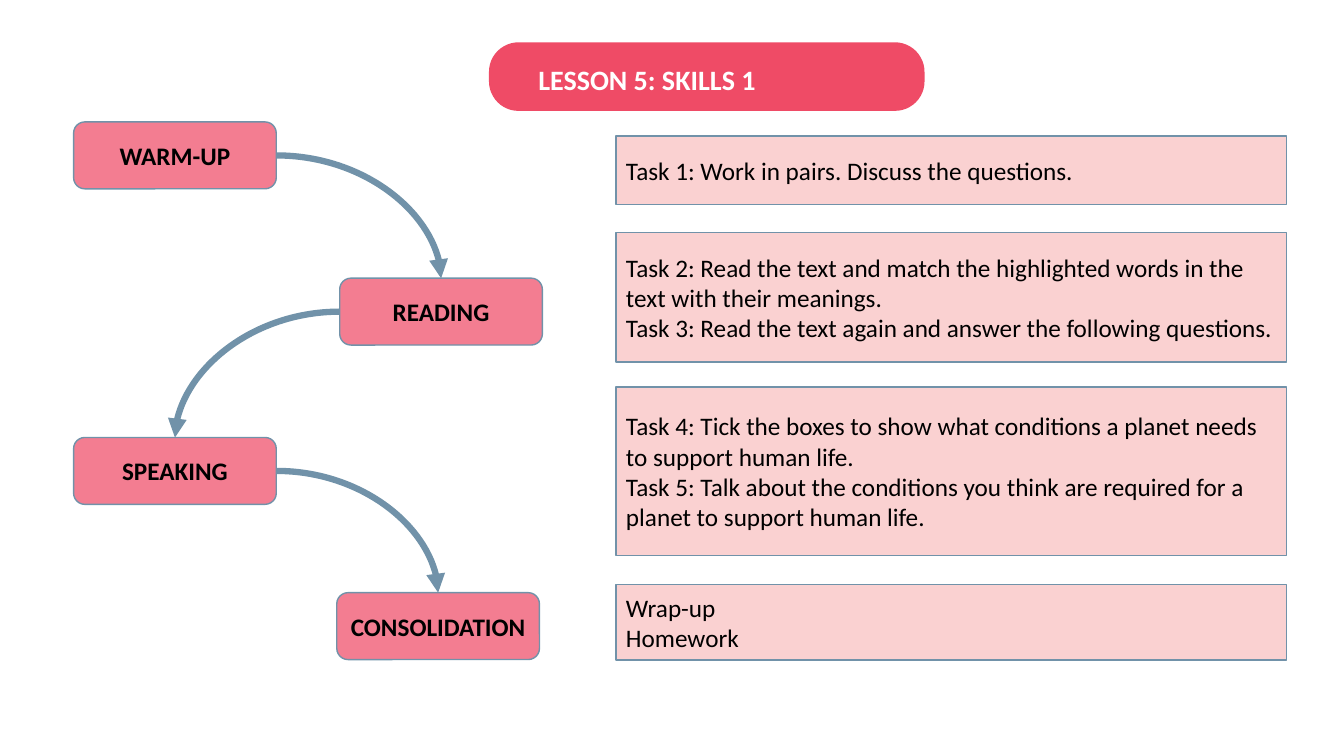
from lxml.etree import SubElement
from pptx import Presentation
from pptx.dml.color import RGBColor
from pptx.enum.shapes import MSO_CONNECTOR as Link, MSO_SHAPE as Form
from pptx.enum.text import MSO_ANCHOR as Anchor, PP_ALIGN as Align
from pptx.oxml.ns import qn
from pptx.util import Inches, Pt

WIDE, HIGH = Inches(13.33), Inches(7.5)
RED = RGBColor(0xEF, 0x4B, 0x66)
ROSE = RGBColor(0xF3, 0x7D, 0x91)
PINK = RGBColor(0xF7, 0xA5, 0xA5)
STEEL = RGBColor(0x71, 0x92, 0xA9)
BLACK = RGBColor(0, 0, 0)
WHITE = RGBColor(0xFF, 0xFF, 0xFF)

STEP_W, STEP_H = 15.08, 8.85
TASK_X, TASK_W = 45.84, 49.89
TOP, LEFT, RIGHT = 0, 1, 3

STEPS = [
    ("WARM-UP", 5.48, 16.13),
    ("READING", 25.28, 36.8),
    ("SPEAKING", 5.48, 57.87),
    ("CONSOLIDATION", 25.06, 78.4),
]
TASKS = [
    (18, 9.07, "Task 1: Work in pairs. Discuss the questions."),
    (30.8, 17.07,
     "Task 2: Read the text and match the highlighted words in the text "
     "with their meanings.\n"
     "Task 3: Read the text again and answer the following questions."),
    (51.2, 22.27,
     "Task 4: Tick the boxes to show what conditions a planet needs to "
     "support human life.\n"
     "Task 5: Talk about the conditions you think are required for a "
     "planet to support human life."),
    (77.33, 10, "Wrap-up\nHomework"),
]


def place(x, y, w, h):
    return [int(side * part / 100)
            for side, part in zip((WIDE, HIGH, WIDE, HIGH), (x, y, w, h))]


def write(shape, text, size, color, bold=False, align=Align.LEFT):
    frame = shape.text_frame
    frame.word_wrap = True
    frame.text = text
    for para in frame.paragraphs:
        para.alignment = align
        for run in para.runs:
            font = run.font
            font.name, font.size, font.bold = "Calibri", Pt(size), bold
            font.color.rgb = color


def add_box(slide, form, area, fill, line=STEEL):
    box = slide.shapes.add_shape(form, *place(*area))
    box.shadow.inherit = False
    box.fill.solid()
    box.fill.fore_color.rgb = fill
    if line is None:
        box.line.fill.background()
    else:
        box.line.color.rgb = line
        box.line.width = Pt(1)
    box.text_frame.vertical_anchor = Anchor.MIDDLE
    return box


def add_title(slide):
    bar = add_box(slide, Form.ROUNDED_RECTANGLE, (36.38, 5.6, 32.41, 9.07),
                  RED, None)
    bar.adjustments[0] = 0.43
    label = slide.shapes.add_textbox(*place(39.31, 7.6, 29.48, 5.87))
    write(label, "LESSON 5: SKILLS 1", 20, WHITE, True)


def add_step(slide, text, x, y):
    box = add_box(slide, Form.ROUNDED_RECTANGLE, (x, y, STEP_W, STEP_H), ROSE)
    write(box, text, 18, BLACK, True, Align.CENTER)
    return box


def add_task(slide, y, h, text):
    box = add_box(slide, Form.RECTANGLE, (TASK_X, y, TASK_W, h), PINK)
    tint = box.element.spPr.find(qn("a:solidFill"))[0]
    SubElement(tint, qn("a:alpha")).set("val", "50000")
    write(box, text, 18, BLACK)


def add_arrow(slide, start, end):
    arrow = slide.shapes.add_connector(Link.CURVE, 0, 0, 0, 0)
    arrow.begin_connect(start, RIGHT if start.left < end.left else LEFT)
    arrow.end_connect(end, TOP)
    arrow.line.color.rgb = STEEL
    arrow.line.width = Pt(4.5)
    props = arrow.element.spPr
    props.find(qn("a:prstGeom")).set("prst", "curvedConnector2")
    SubElement(props.find(qn("a:ln")), qn("a:tailEnd")).set("type", "triangle")
    SubElement(props, qn("a:effectLst"))


def main():
    deck = Presentation()
    deck.slide_width, deck.slide_height = WIDE, HIGH
    slide = deck.slides.add_slide(deck.slide_layouts[6])
    add_title(slide)
    boxes = [add_step(slide, *step) for step in STEPS]
    for start, end in zip(boxes, boxes[1:]):
        add_arrow(slide, start, end)
    for task in TASKS:
        add_task(slide, *task)
    deck.save("out.pptx")


if __name__ == "__main__":
    main()
